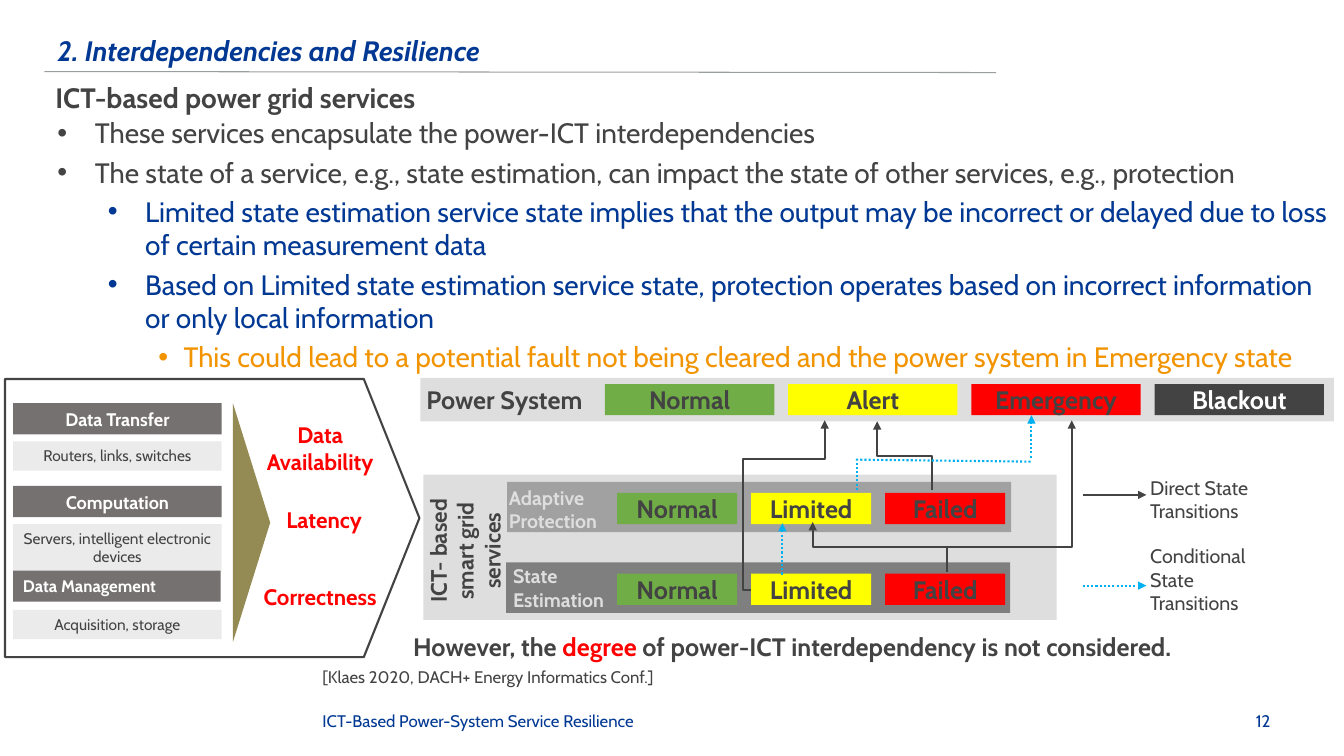
from collections import namedtuple

from lxml.etree import SubElement
from pptx import Presentation
from pptx.dml.color import RGBColor
from pptx.enum.dml import MSO_LINE
from pptx.enum.shapes import MSO_CONNECTOR as Link, MSO_SHAPE as Shape
from pptx.enum.text import MSO_ANCHOR as Anchor, MSO_AUTO_SIZE as AutoSize, PP_ALIGN as Align
from pptx.oxml.ns import qn
from pptx.util import Inches, Pt

FONT = "Cabin"
COLORS = {
    "navy": "003893", "ink": "434343", "orange": "F29400", "red": "FF0000",
    "green": "70AD47", "yellow": "FFFF00", "white": "FFFFFF", "cyan": "00B0F0",
    "rule": "999F9E", "pale": "DEDEDE", "gray": "A1A1A1", "dark gray": "7F7F7F",
    "heading": "767171", "detail": "D9D9D9", "olive": "948A54",
}


# All lengths are columns and rows of a grid with ten cells to the inch
def cells(count):
    return Inches(count / 10)


class Box(namedtuple("Box", "left top width height")):
    def area(self, left, top, width, height):
        return Box(self.left + left, self.top + top, width, height)

    def point(self, x, y):
        return self.left + x, self.top + y

    def lengths(self):
        return [cells(length) for length in self]


def color(name):
    return RGBColor.from_string(COLORS[name])


# Text
def write_spans(para, spans, size=18, ink="ink", bold=False, italic=False):
    for text, span_ink in [(spans, ink)] if isinstance(spans, str) else spans:
        span = para.add_run()
        span.text = text
        font = span.font
        font.name, font.size, font.bold, font.italic = FONT, Pt(size), bold, italic
        font.color.rgb = color(span_ink)


def write(shape, spans, align=Align.LEFT, anchor=Anchor.TOP,
          insets=(1, 0.5, 1, 0.5), wrap=True, **style):
    frame = shape.text_frame
    frame.word_wrap, frame.auto_size, frame.vertical_anchor = wrap, AutoSize.NONE, anchor
    (frame.margin_left, frame.margin_top,
     frame.margin_right, frame.margin_bottom) = map(cells, insets)
    frame.paragraphs[0].alignment = align
    write_spans(frame.paragraphs[0], spans, **style)


def add_label(page, box, spans, rotation=0, **style):
    label = page.shapes.add_textbox(*box.lengths())
    label.rotation = rotation
    write(label, spans, **style)


# Shapes and lines
def add_block(page, box, fill=None, kind=Shape.RECTANGLE, outline=None, opacity=None):
    block = page.shapes.add_shape(kind, *box.lengths())
    block.shadow.inherit = False
    if fill:
        block.fill.solid()
        block.fill.fore_color.rgb = color(fill)
    else:
        block.fill.background()
    if outline:
        block.line.color.rgb = color(outline)
        block.line.width = Pt(1.5)
    else:
        block.line.fill.background()
    if opacity:
        shade = block.element.spPr.find(qn("a:solidFill"))[0]
        SubElement(shade, qn("a:alpha"), val=str(opacity * 1000))
    return block


def add_line(page, start, end, ink="ink", width=1.5, dotted=False, arrow=True,
             kind=Link.STRAIGHT):
    line = page.shapes.add_connector(kind, *map(cells, (*start, *end)))
    line.line.color.rgb = color(ink)
    line.line.width = Pt(width)
    if dotted:
        line.line.dash_style = MSO_LINE.ROUND_DOT
    properties = line.element.spPr
    if arrow:
        SubElement(properties.find(qn("a:ln")), qn("a:tailEnd"), type="triangle")
    SubElement(properties, qn("a:effectLst"))
    return line


def add_elbow(page, start, end, bends, upward=True):
    """Bends are shares of the way; an upward elbow leaves its start vertically."""
    if upward:
        middle_x, middle_y = (start[0] + end[0]) / 2, (start[1] + end[1]) / 2
        run, rise = (end[0] - start[0]) / 2, (start[1] - end[1]) / 2
        start, end = (middle_x - rise, middle_y - run), (middle_x + rise, middle_y + run)
    elbow = add_line(page, start, end, kind=Link.ELBOW)
    if upward:
        elbow.element.spPr.find(qn("a:xfrm")).set("rot", str(270 * 60000))
    geometry = elbow.element.spPr.find(qn("a:prstGeom"))
    geometry.set("prst", f"bentConnector{len(bends) + 2}")
    for number, bend in enumerate(bends, 1):
        SubElement(geometry.find(qn("a:avLst")), qn("a:gd"), name=f"adj{number}",
                   fmla=f"val {round(bend * 100000)}")


# Heading with rule and subtitle
def add_heading(page, box):
    add_line(page, box.point(-0.3, 4.4), box.point(94.1, 4.5), "rule", 0.75, arrow=False)
    title = page.shapes.title
    title.left, title.top, title.width, title.height = box.lengths()
    write(title, "2. Interdependencies and Resilience", anchor=Anchor.MIDDLE,
          size=20, ink="navy", bold=True, italic=True)
    add_label(page, box.area(-0.2, 4.7, 95.5, 4.5), "ICT-based power grid services",
              anchor=Anchor.MIDDLE, size=20, bold=True)


# Bullet list
def add_bullets(page, box):
    indents = [(3.7, 3.7, "ink"), (8.7, 3.7, "navy"), (12.5, 2.5, "orange")]
    bullets = [
        (0, "These services encapsulate the power-ICT interdependencies"),
        (0, "The state of a service, e.g., state estimation, can impact the state of other "
            "services, e.g., protection"),
        (1, "Limited state estimation service state implies that the output may be incorrect "
            "or delayed due to loss of certain measurement data"),
        (1, "Based on Limited state estimation service state, protection operates based on "
            "incorrect information or only local information"),
        (2, "This could lead to a potential fault not being cleared and the power system in "
            "Emergency state"),
    ]
    body = page.placeholders[1]
    body.left, body.top, body.width, body.height = box.lengths()
    frame = body.text_frame
    frame.auto_size = AutoSize.NONE
    for number, (level, text) in enumerate(bullets):
        para = frame.add_paragraph() if number else frame.paragraphs[0]
        margin, hanging, ink = indents[level]
        para.level = level
        properties = para._p.get_or_add_pPr()
        properties.set("marL", str(cells(margin)))
        properties.set("indent", str(-cells(hanging)))
        SubElement(properties, qn("a:buFont"), typeface="Arial")
        SubElement(properties, qn("a:buChar"), char="•")
        para.space_before = Pt(4 if number else 0)
        write_spans(para, text, size=20, ink=ink)


# State bars
def add_states(page, box, names, pitch):
    fills = ["green", "yellow", "red", "ink"]
    for number, (name, fill) in enumerate(zip(names, fills)):
        chip = add_block(page, box.area(number * pitch, 0, box.width, box.height), fill)
        write(chip, name, align=Align.CENTER, anchor=Anchor.MIDDLE,
              insets=(0.8, 0.4, 0.8, 0.4), bold=True,
              ink="white" if fill == "ink" else "ink")


def add_power_system(page, box):
    add_block(page, box, "pale")
    add_states(page, box.area(18.3, 0.6, 16.8, 3.1),
               ["Normal", "Alert", "Emergency", "Blackout"], 18.17)
    add_label(page, box.area(-0.4, 0.1, 19.9, 4), "Power System", bold=True)


def add_services(page, box):
    add_block(page, box, "pale")
    add_label(page, box.area(-3.1, 3, 14.5, 9.1), "ICT- based smart grid services",
              rotation=270, align=Align.CENTER, size=16, bold=True)
    rows = [("Adaptive Protection", "gray", 8.3, 0.7, 7.5, 0.6),
            ("State Estimation", "dark gray", 8.2, 8.7, 7.9, 8.4)]
    for name, fill, left, top, label_left, label_top in rows:
        add_block(page, box.area(left, top, 50, 5), fill)
        add_states(page, box.area(19.2, top + 1.1, 11.9, 3.1),
                   ["Normal", "Limited", "Failed"], 13.3)
        add_label(page, box.area(label_left, label_top, 13, 5.7), name,
                  size=14, ink="pale", bold=True)


# Transitions between states
def add_transitions(page, box):
    add_elbow(page, box.point(51.7, 7.2), box.point(64.3, -5.4), [0])
    add_elbow(page, box.point(32.5, 11.4), box.point(39.8, -5.4), [-0.11, 0.77], upward=False)
    add_elbow(page, box.point(50.4, 1.5), box.point(45, -5.3), [0.5])
    add_elbow(page, box.point(51.9, 9.7), box.point(38.6, 4.7), [0.5])
    dotted = [(60.3, -1.7, 60.3, -5.9, True), (42.9, -1.5, 60.4, -1.3, False),
              (43, 1.5, 43, -1.6, False), (35.6, 9.9, 35.6, 4.8, True)]
    for x1, y1, x2, y2, arrow in dotted:
        add_line(page, box.point(x1, y1), box.point(x2, y2), "cyan", dotted=True, arrow=arrow)


def add_legend(page, box):
    entries = [("Direct State Transitions", "ink", False, 2.4, 0, 13.5),
               ("Conditional State Transitions", "cyan", True, 11.4, 6.8, 15.4)]
    for text, ink, dotted, line_top, text_top, width in entries:
        add_line(page, box.point(0, line_top), box.point(6.3, line_top), ink, dotted=dotted)
        add_label(page, box.area(5.7, text_top, width, 8), text, size=14)


# Data properties
def add_data_panel(page, box):
    panel = add_block(page, box, kind=Shape.PENTAGON, outline="ink")
    panel.adjustments[0] = 0.2
    tasks = [("Data Transfer", "Routers, links, switches", 2.4, 6.2, 2.9),
             ("Computation", "Servers, intelligent electronic devices", 10.6, 14.4, 4.7),
             ("Data Management", "Acquisition, storage", 19, 22.9, 2.9)]
    for name, detail, top, detail_top, detail_height in tasks:
        last = name == "Data Management"
        heading = add_block(page, box.area(0.8, top, 20.6 if last else 20.7, 3.1), "heading")
        write(heading, name, align=Align.LEFT if last else Align.CENTER,
              size=12 if last else 13, ink="white", bold=True)
        note = add_block(page, box.area(0.8, detail_top, 20.7, detail_height),
                         "detail", opacity=50)
        write(note, detail, align=Align.CENTER, insets=(0.6, 0.5, 0.6, 0.5), size=11)
    wedge = add_block(page, box.area(12.6, 12.4, 23.7, 3.7), "olive", Shape.ISOSCELES_TRIANGLE)
    wedge.rotation = 90
    for text, left, top in [("Data Availability", 22.7, 3.7), ("Latency", 23.1, 12.1),
                            ("Correctness", 22.7, 19.8)]:
        add_label(page, box.area(left, top, 17.1, 6.4), text, align=Align.CENTER,
                  size=16, ink="red", bold=True)


# Conclusion, citation and footer
def add_closing(page, box):
    add_label(page, box.area(9, 0, 80, 4),
              [("However, the ", "ink"), ("degree", "red"),
               (" of power-ICT interdependency is not considered.", "ink")],
              wrap=False, bold=True)
    add_label(page, box.area(0, 3.6, 85.7, 3),
              "[Klaes 2020, DACH+ Energy Informatics Conf.]", size=12)
    footer = {"anchor": Anchor.MIDDLE, "size": 12, "ink": "navy"}
    add_label(page, box.area(0, 7.4, 83.1, 4),
              "ICT-Based Power-System Service Resilience", **footer)
    add_label(page, box.area(83.2, 7.4, 12.8, 4), "12", align=Align.RIGHT, **footer)


def main():
    deck = Presentation()
    deck.slide_width, deck.slide_height = Inches(13.33), Inches(7.5)
    page = deck.slides.add_slide(deck.slide_layouts[1])
    services = Box(42, 47.1, 62.8, 14.4)
    add_heading(page, Box(4.7, 2.7, 95.5, 4.5))
    add_bullets(page, Box(4.7, 11, 128.6, 54.1))
    add_legend(page, Box(107.4, 46.7, 21, 15))
    add_services(page, services)
    add_power_system(page, Box(41.7, 37.5, 90.6, 4.3))
    add_transitions(page, services)
    add_data_panel(page, Box(0.5, 37.6, 41.1, 27.6))
    add_closing(page, Box(31, 62.1, 96, 11.4))
    deck.save("out.pptx")


if __name__ == "__main__":
    main()
